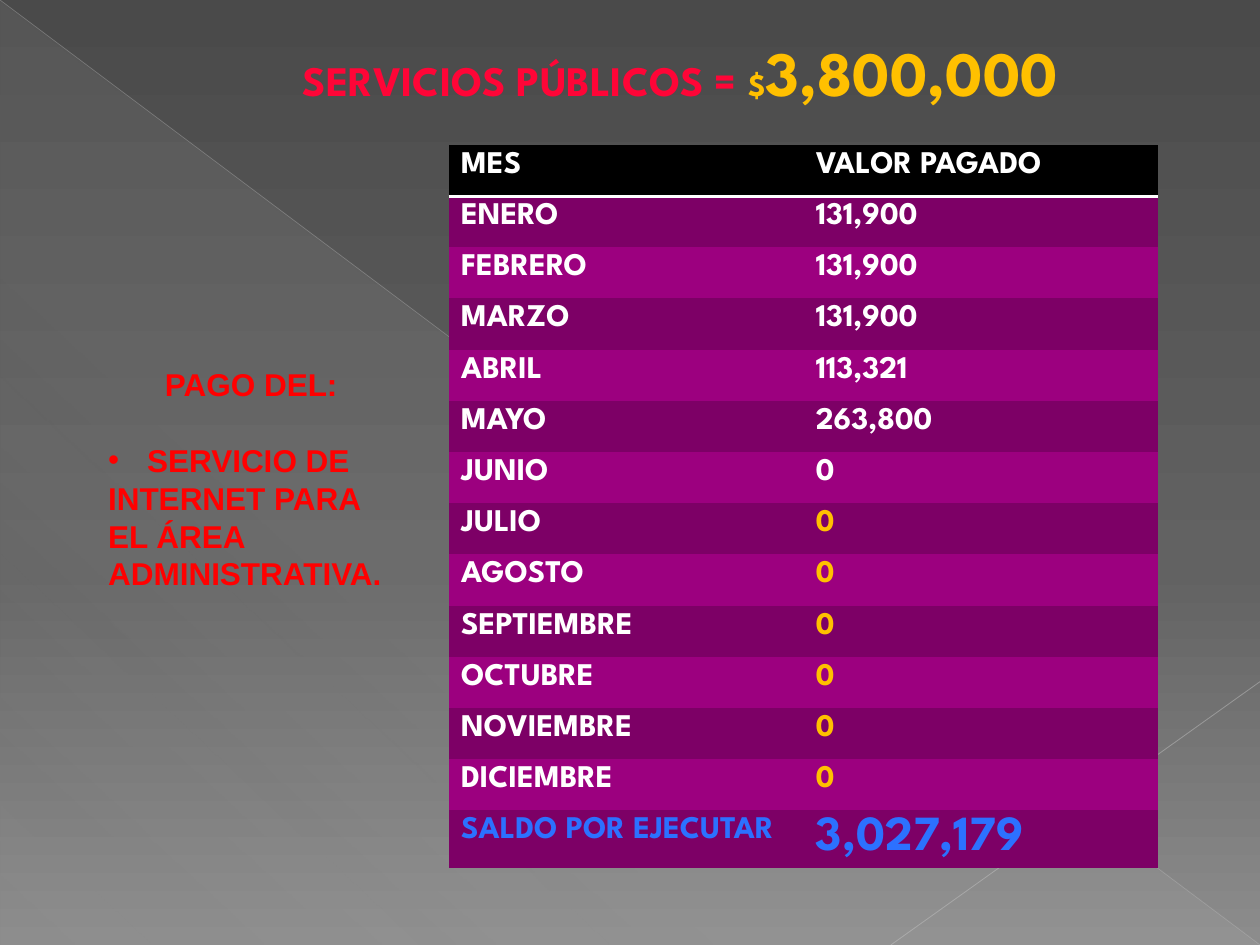
from lxml import etree
from pptx import Presentation
from pptx.dml.color import RGBColor
from pptx.enum.shapes import MSO_CONNECTOR, MSO_SHAPE
from pptx.enum.text import MSO_ANCHOR, PP_ALIGN
from pptx.oxml.ns import qn
from pptx.util import Inches, Pt

STRAIGHT = MSO_CONNECTOR.STRAIGHT
RIGHT_TRIANGLE = MSO_SHAPE.RIGHT_TRIANGLE
BOTTOM = MSO_ANCHOR.BOTTOM
CENTER, LEFT = PP_ALIGN.CENTER, PP_ALIGN.LEFT

HEADING_FONT, BODY_FONT = "League Spartan", "Arial"
WHITE, BLACK, RED, GOLD, BLUE = "FFFFFF", "000000", "FF0000", "FFC000", "2C71FF"
TITLE_RED = "FF0537"
ROW_FILLS = ("7D0066", "9C007F")
PLAIN_TABLE_STYLE = "{2D5ABB26-0587-4C30-8999-92F81FD0307C}"
PAYMENTS = [
    ("ENERO", "131,900"), ("FEBRERO", "131,900"), ("MARZO", "131,900"),
    ("ABRIL", "113,321"), ("MAYO", "263,800"), ("JUNIO", "0"),
    ("JULIO", "0"), ("AGOSTO", "0"), ("SEPTIEMBRE", "0"),
    ("OCTUBRE", "0"), ("NOVIEMBRE", "0"), ("DICIEMBRE", "0"),
]
FIRST_PENDING = 6


def color(hex_string):
    """Return the colour for a hex string."""
    return RGBColor.from_string(hex_string)


def add_text(paragraph, text, size=18, font=HEADING_FONT, fill=WHITE, bold=True):
    """Append a formatted run to a paragraph."""
    run = paragraph.add_run()
    run.text = text
    run.font.size = Pt(size)
    run.font.name = font
    run.font.bold = bold
    run.font.color.rgb = color(fill)


def add_color(parent, hex_string, opacity=100):
    """Append a colour element with the given opacity percentage."""
    element = etree.SubElement(parent, qn("a:srgbClr"), val=hex_string)
    if opacity < 100:
        etree.SubElement(element, qn("a:alpha"), val=str(opacity * 1000))


def set_gradient(fill, owner, angle, stops):
    """Give a fill a linear gradient of (position, colour, opacity) stops."""
    fill.gradient()
    fill.gradient_angle = 360 - angle
    stop_list = owner.find(".//" + qn("a:gsLst"))
    for stop in list(stop_list):
        stop_list.remove(stop)
    for position, hex_string, opacity in stops:
        stop = etree.SubElement(stop_list, qn("a:gs"), pos=str(position * 1000))
        add_color(stop, hex_string, opacity)


def add_thin_line(slide, start, end, hex_string, width, opacity):
    """Draw a translucent straight line between two points in inches."""
    points = [Inches(value) for value in (*start, *end)]
    line = slide.shapes.add_connector(STRAIGHT, *points)
    line.line.width = Pt(width)
    line.line.color.rgb = color(hex_string)
    properties = line._element.spPr
    solid = properties.find(".//" + qn("a:solidFill"))
    solid.clear()
    add_color(solid, hex_string, opacity)
    etree.SubElement(properties, qn("a:effectLst"))


def draw_backdrop(slide, left, top, width, height):
    """Paint the grey background, its pale triangle and diagonal lines."""
    set_gradient(slide.background.fill, slide._element, 90,
                 [(0, "4A4A4A", 100), (60, "626262", 100), (100, "8C8C8C", 100)])
    triangle = slide.shapes.add_shape(
        RIGHT_TRIANGLE, Inches(left), Inches(top), Inches(width), Inches(height))
    triangle.shadow.inherit = False
    triangle.line.fill.background()
    set_gradient(triangle.fill, triangle._element, 133,
                 [(0, "D2D2D2", 10), (70, "D2D2D2", 8), (100, "D2D2D2", 1)])
    right, bottom = left + width, top + height
    add_thin_line(slide, (left, top), (right, bottom), "BFBFBF", 0.39, 35)
    add_thin_line(slide, (right, 5.41), (7.07, bottom), "C6C6C6", 0.47, 45)


def place_title(slide, left, top, width, height):
    """Place the title with the yearly budget."""
    title = slide.shapes.title
    title.left, title.top = Inches(left), Inches(top)
    title.width, title.height = Inches(width), Inches(height)
    title.text_frame.vertical_anchor = BOTTOM
    paragraph = title.text_frame.paragraphs[0]
    paragraph.alignment = CENTER
    add_text(paragraph, "SERVICIOS PÚBLICOS = ", size=24, fill=TITLE_RED)
    add_text(paragraph, "$", fill=GOLD)
    add_text(paragraph, "3,800,000", size=36, fill=GOLD)


def fill_cell(cell, text, background, **text_format):
    """Write a table cell on a solid background."""
    cell.fill.solid()
    cell.fill.fore_color.rgb = color(background)
    add_text(cell.text_frame.paragraphs[0], text, **text_format)


def underline_cell(cell):
    """Draw a white rule under a table cell."""
    border = etree.Element(qn("a:lnB"), w=str(Pt(2)))
    add_color(etree.SubElement(border, qn("a:solidFill")), WHITE)
    cell._tc.get_or_add_tcPr().insert(0, border)


def place_table(slide, left, top, width, height):
    """Place the table of monthly payments and the balance."""
    row_count = len(PAYMENTS) + 2
    frame = slide.shapes.add_table(
        row_count, 2, Inches(left), Inches(top), Inches(width), Inches(height))
    table = frame.table
    table._tbl.find(".//" + qn("a:tableStyleId")).text = PLAIN_TABLE_STYLE
    for column, heading in enumerate(("MES", "VALOR PAGADO")):
        fill_cell(table.cell(0, column), heading, BLACK)
        underline_cell(table.cell(0, column))
    for index, (month, amount) in enumerate(PAYMENTS):
        background = ROW_FILLS[index % 2]
        amount_color = GOLD if index >= FIRST_PENDING else WHITE
        fill_cell(table.cell(index + 1, 0), month, background)
        fill_cell(table.cell(index + 1, 1), amount, background, fill=amount_color)
    last, background = row_count - 1, ROW_FILLS[len(PAYMENTS) % 2]
    fill_cell(table.cell(last, 0), "SALDO POR EJECUTAR", background, fill=BLUE)
    fill_cell(table.cell(last, 1), "3,027,179", background, size=28, fill=BLUE)


def add_bullet(paragraph, indent):
    """Give a paragraph a round bullet with a hanging indent."""
    properties = paragraph._p.get_or_add_pPr()
    properties.set("marL", str(Inches(indent)))
    properties.set("indent", str(-Inches(indent)))
    etree.SubElement(properties, qn("a:buFont"), typeface=BODY_FONT)
    etree.SubElement(properties, qn("a:buChar"), char="•")


def place_note(slide, left, top, width, height):
    """Place the note saying what the payments cover."""
    box = slide.shapes.add_textbox(
        Inches(left), Inches(top), Inches(width), Inches(height))
    frame = box.text_frame
    frame.word_wrap = True
    lines = ("PAGO DEL:", "SERVICIO DE", "INTERNET PARA", "EL ÁREA", "ADMINISTRATIVA.")
    for index, text in enumerate(lines):
        paragraph = frame.add_paragraph() if index else frame.paragraphs[0]
        paragraph.alignment = LEFT if index else CENTER
        paragraph.line_spacing = Pt(21.6)
        if index == 1:
            paragraph.space_before = Pt(21.6)
            add_bullet(paragraph, 0.31)
        add_text(paragraph, text, font=BODY_FONT, fill=RED)


def main():
    """Build and save the presentation."""
    presentation = Presentation()
    presentation.slide_width, presentation.slide_height = Inches(10), Inches(7.5)
    slide = presentation.slides.add_slide(presentation.slide_layouts[5])
    draw_backdrop(slide, 0, 0, 10, 7.5)
    place_table(slide, 3.56, 1.15, 5.63, 5.69)
    place_title(slide, 1.69, 0.21, 7.42, 0.71)
    place_note(slide, 0.76, 2.85, 2.47, 1.92)
    presentation.save("out.pptx")


if __name__ == "__main__":
    main()
